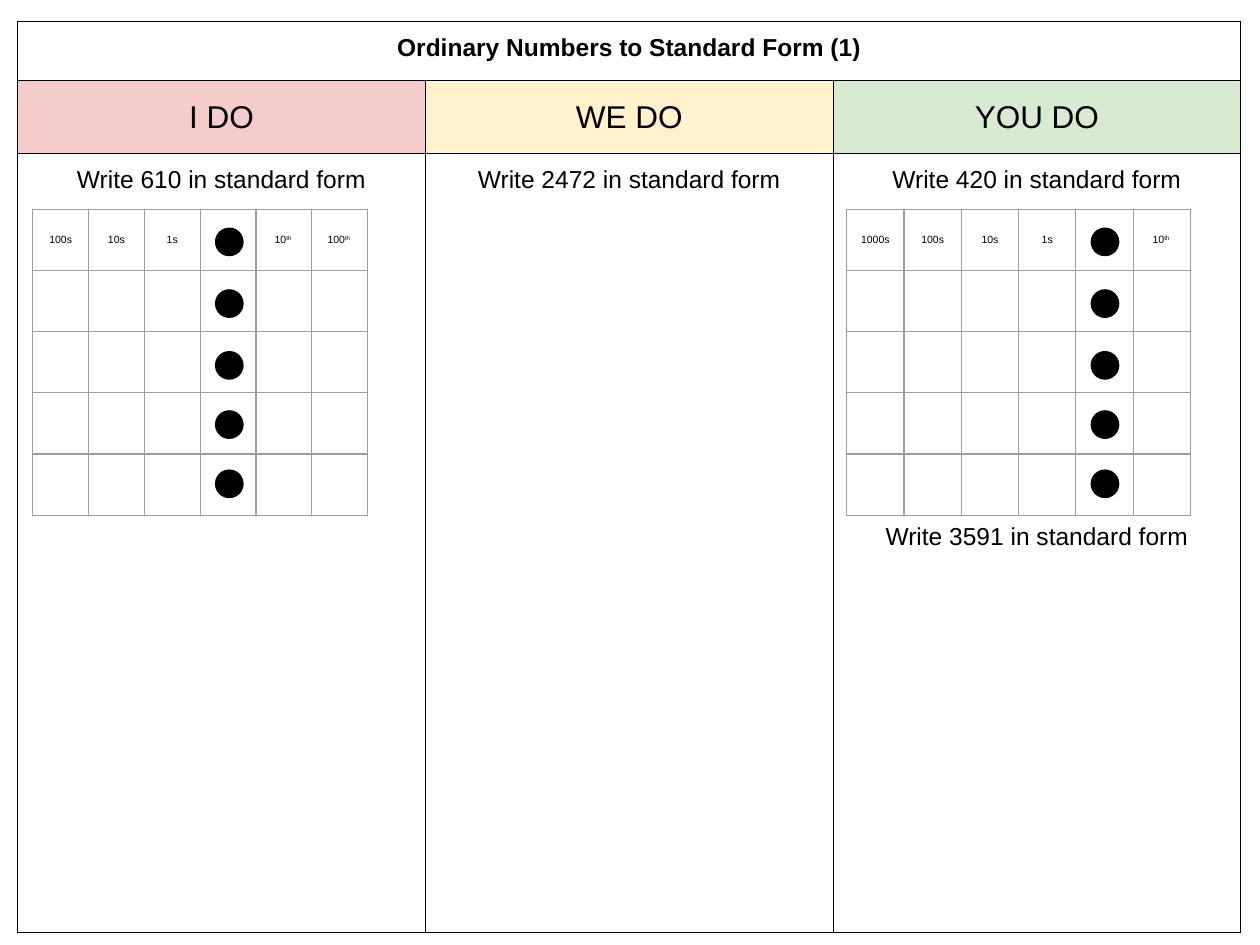
import pptx
import pptx.dml.color
import pptx.enum.shapes
import pptx.enum.text
import pptx.oxml.ns
import pptx.util
import lxml.etree

Inches = pptx.util.Inches
Pt = pptx.util.Pt
ANCHOR = pptx.enum.text.MSO_ANCHOR


def color(value):
    return pptx.dml.color.RGBColor.from_string(value)


class Worksheet:
    """Hold the style and the current slide, and draw each kind of element."""

    font = "Arial"
    ink = "000000"
    grid = "9E9E9E"

    def __init__(self, slide):
        self.slide = slide

    def table(self, left, top, widths, heights, border):
        frame = self.slide.shapes.add_table(
            len(heights), len(widths), Inches(left), Inches(top),
            Inches(sum(widths)), Inches(sum(heights)))
        table = frame.table
        table.first_row = table.horz_banding = False
        for column, width in zip(table.columns, widths):
            column.width = Inches(width)
        for row, height in zip(table.rows, heights):
            row.height = Inches(height)
        for cell in table.iter_cells():
            self.border(cell, border)
            cell.fill.background()
        return table

    def border(self, cell, value):
        properties = cell._tc.get_or_add_tcPr()
        qn = pptx.oxml.ns.qn
        for side in ("lnL", "lnR", "lnT", "lnB"):
            line = lxml.etree.SubElement(properties, qn(f"a:{side}"), w=str(Pt(0.75)))
            fill = lxml.etree.SubElement(line, qn("a:solidFill"))
            lxml.etree.SubElement(fill, qn("a:srgbClr"), val=value)

    def paragraph(self, paragraph, text, size, bold=False, superscript=""):
        paragraph.alignment = pptx.enum.text.PP_ALIGN.CENTER
        for part in filter(None, (text, superscript)):
            run = paragraph.add_run()
            run.text = part
            run.font.name = self.font
            run.font.size = Pt(size)
            run.font.bold = bold
            run.font.color.rgb = color(self.ink)
        if superscript:
            run._r.get_or_add_rPr().set("baseline", "30000")

    def cell(self, cell, text, size, bold=False, fill=None, anchor=ANCHOR.TOP):
        cell.margin_left = cell.margin_right = Inches(0.1)
        cell.margin_top = cell.margin_bottom = Inches(0.1)
        cell.vertical_anchor = anchor
        if fill:
            cell.fill.solid()
            cell.fill.fore_color.rgb = color(fill)
        self.paragraph(cell.text_frame.paragraphs[0], text, size, bold)

    def dot(self, left, top, size=0.2):
        shape = self.slide.shapes.add_shape(
            pptx.enum.shapes.MSO_SHAPE.OVAL,
            Inches(left), Inches(top), Inches(size), Inches(size))
        shape.shadow.inherit = False
        shape.fill.solid()
        shape.fill.fore_color.rgb = color(self.ink)
        shape.line.color.rgb = color(self.ink)
        shape.line.width = Pt(2)

    def place_value_grid(self, left, width, headings, dot_left):
        table = self.table(left, 1.66, [width] * len(headings), [0.486] * 5, self.grid)
        for column, (text, superscript) in enumerate(headings):
            cell = table.cell(0, column)
            cell.vertical_anchor = ANCHOR.MIDDLE
            if text:
                self.paragraph(cell.text_frame.paragraphs[0], text, 6,
                               superscript=superscript)
        for top in (1.82, 2.31, 2.8, 3.27, 3.74):
            self.dot(dot_left, top)


def main():
    presentation = pptx.Presentation()
    presentation.slide_width = Inches(10)
    presentation.slide_height = Inches(7.5)
    sheet = Worksheet(presentation.slides.add_slide(presentation.slide_layouts[6]))

    lesson = sheet.table(0.14, 0.17, [3.236] * 3, [0.47, 0.58, 6.18], sheet.ink)
    lesson.cell(0, 0).merge(lesson.cell(0, 2))
    sheet.cell(lesson.cell(0, 0), "Ordinary Numbers to Standard Form (1)", 14, bold=True)
    stages = [
        ("I DO", "F4CCCC", "610"),
        ("WE DO", "FFF2CC", "2472"),
        ("YOU DO", "D9EAD3", "420"),
    ]
    question = "Write {} in standard form"
    for column, (stage, fill, number) in enumerate(stages):
        sheet.cell(lesson.cell(1, column), stage, 18, fill=fill, anchor=ANCHOR.MIDDLE)
        sheet.cell(lesson.cell(2, column), question.format(number), 14)
    second_question = lesson.cell(2, 2).text_frame.add_paragraph()
    second_question.space_before = Pt(188.5)
    sheet.paragraph(second_question, question.format("3591"), 14)

    thousands, hundreds, tens, ones = (
        (text, "") for text in ("1000s", "100s", "10s", "1s"))
    point, tenths, hundredths = ("", ""), ("10", "th "), ("100", "th ")
    sheet.place_value_grid(
        0.26, 0.443, [hundreds, tens, ones, point, tenths, hundredths], 1.72)
    sheet.place_value_grid(
        6.72, 0.455, [thousands, hundreds, tens, ones, point, tenths], 8.67)

    presentation.save("out.pptx")


if __name__ == "__main__":
    main()
